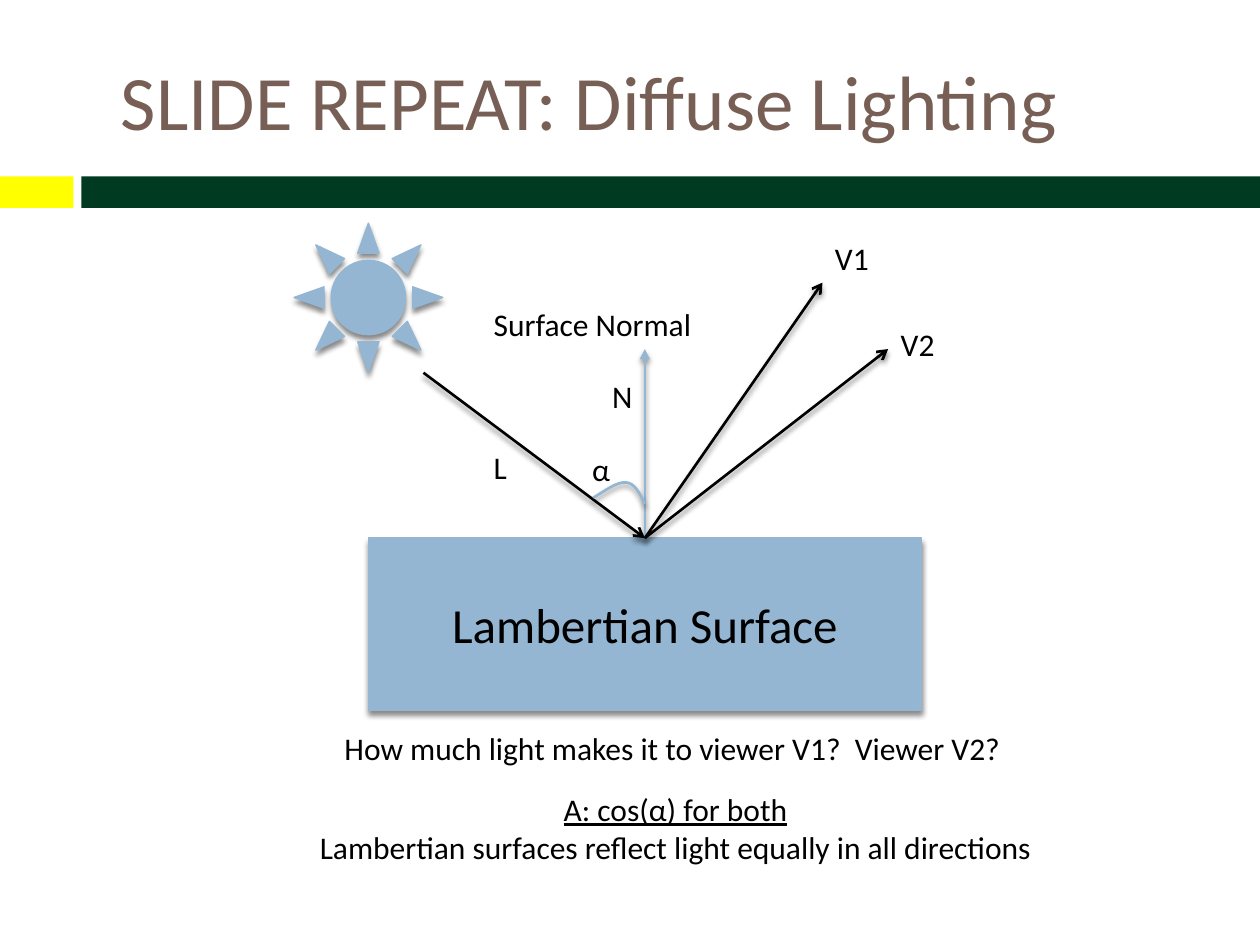
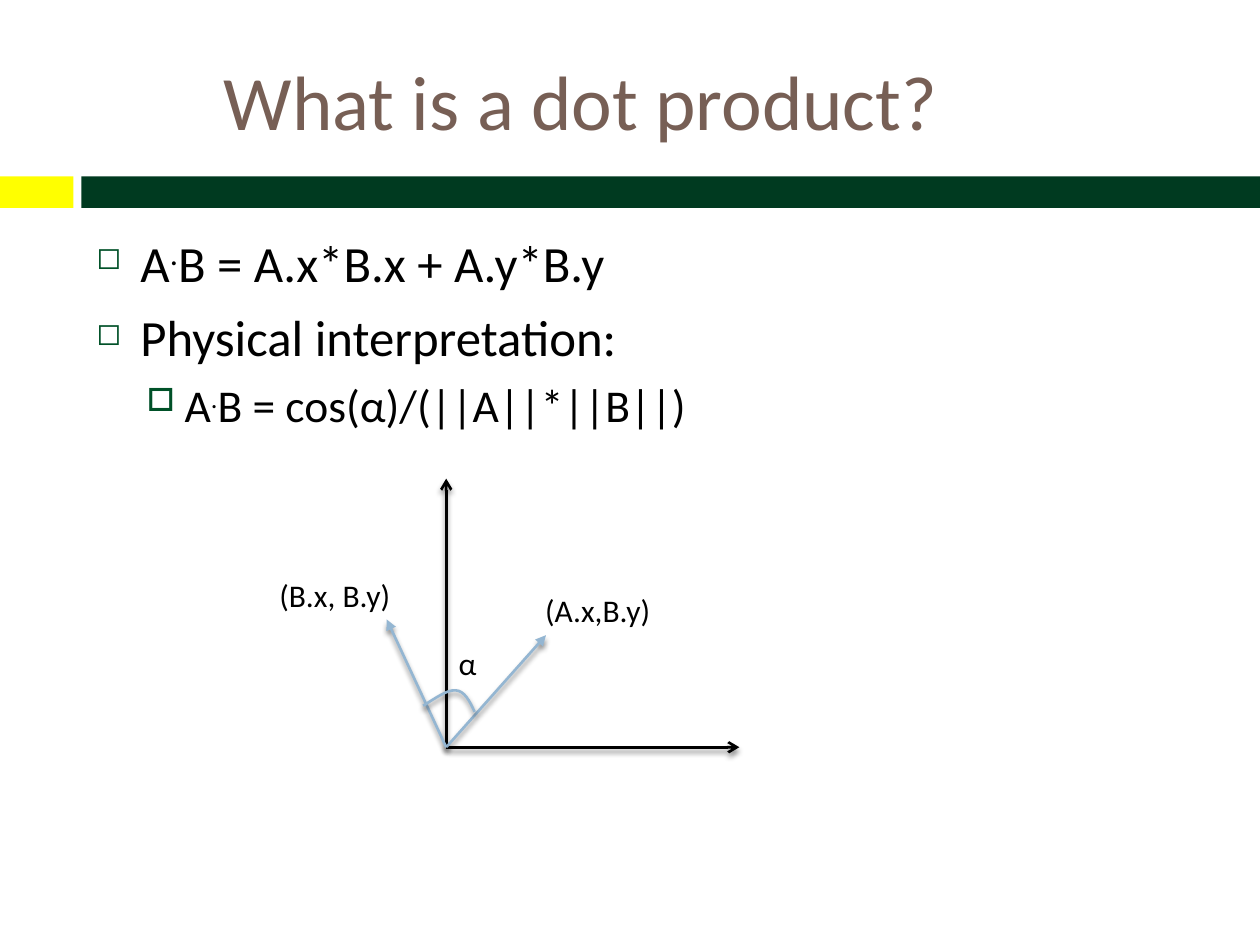
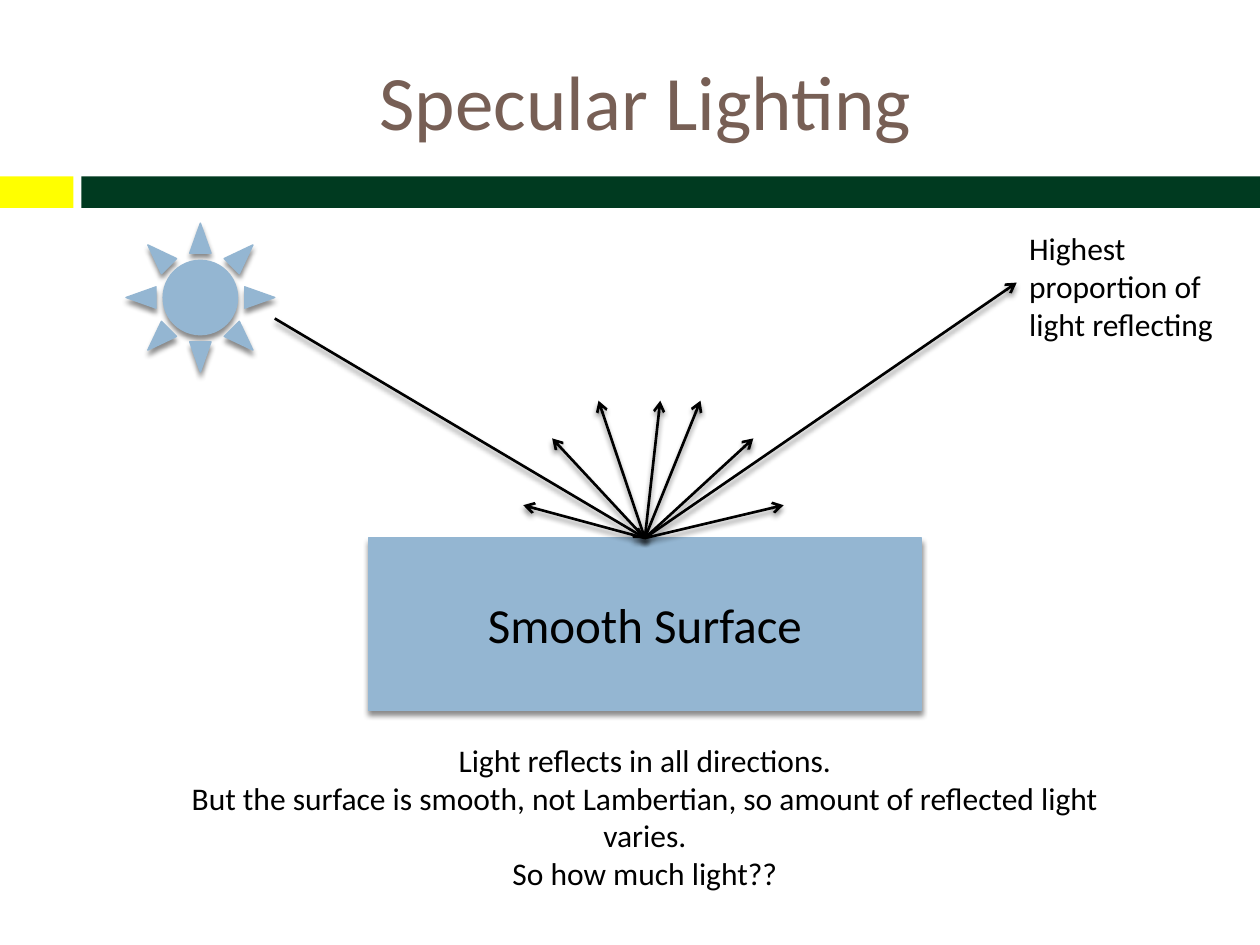
from dataclasses import dataclass

from lxml.etree import SubElement
from pptx import Presentation
from pptx.dml.color import RGBColor
from pptx.enum.shapes import MSO_CONNECTOR, MSO_SHAPE
from pptx.enum.text import MSO_ANCHOR, PP_ALIGN
from pptx.oxml.ns import qn
from pptx.util import Pt


@dataclass(frozen=True)
class Theme:
    font: str = "Calibri"
    ink: RGBColor = RGBColor(0x00, 0x00, 0x00)
    title: RGBColor = RGBColor(0x77, 0x5F, 0x55)
    accent: RGBColor = RGBColor(0x94, 0xB6, 0xD2)
    band: RGBColor = RGBColor(0x00, 0x3A, 0x20)
    band_tab: RGBColor = RGBColor(0xFF, 0xFF, 0x00)
    bullet: str = "005128"
    title_size: float = 44
    surface_size: float = 28
    label_size: float = 18
    formula_size: float = 29
    dot_size: float = 32
    detail_size: float = 26
    ray_width: float = 1.5
    outline_width: float = 0.79


THEME = Theme()
LABEL_HEIGHT = 28.8
HIT = (368.5, 307.5)  # where light meets the surface


def add_run(paragraph, text, size, color=THEME.ink, underline=None, raised=False):
    run = paragraph.add_run()
    run.text = text
    run.font.name = THEME.font
    run.font.size = Pt(size)
    run.font.color.rgb = color
    run.font.underline = underline
    if raised:
        run._r.get_or_add_rPr().set("baseline", "30000")


def add_text_box(slide, left, top, width, height, wrap=True, anchor=MSO_ANCHOR.TOP):
    box = slide.shapes.add_textbox(Pt(left), Pt(top), Pt(width), Pt(height))
    box.text_frame.word_wrap = wrap
    box.text_frame.vertical_anchor = anchor
    return box.text_frame


def next_paragraph(frame, index):
    return frame.add_paragraph() if index else frame.paragraphs[0]


def add_label(slide, text, left, top, width):
    frame = add_text_box(slide, left, top, width, LABEL_HEIGHT, wrap=False)
    add_run(frame.paragraphs[0], text, THEME.label_size)


def add_caption(slide, lines, left, top, width, height, align=PP_ALIGN.CENTER,
                underlined_first=False):
    frame = add_text_box(slide, left, top, width, height)
    for index, line in enumerate(lines):
        paragraph = next_paragraph(frame, index)
        paragraph.alignment = align
        underline = True if underlined_first and index == 0 else None
        add_run(paragraph, line, THEME.label_size, underline=underline)


def cast_shadow(shape):
    """Add the soft drop shadow; call after fill and line are set."""
    effects = SubElement(shape._element.spPr, qn("a:effectLst"))
    shadow = SubElement(effects, qn("a:outerShdw"), blurRad=str(Pt(3)),
                        dist=str(Pt(2.4)), dir="5400000", rotWithShape="0")
    black = SubElement(shadow, qn("a:srgbClr"), val="000000")
    SubElement(black, qn("a:alpha"), val="45000")


def add_solid(slide, preset, left, top, width, height):
    solid = slide.shapes.add_shape(preset, Pt(left), Pt(top), Pt(width), Pt(height))
    solid.fill.solid()
    solid.fill.fore_color.rgb = THEME.accent
    solid.line.color.rgb = THEME.accent
    solid.line.width = Pt(THEME.outline_width)
    cast_shadow(solid)
    return solid


def add_sun(slide, left):
    add_solid(slide, MSO_SHAPE.SUN, left, 127.5, 85, 85)


def add_surface(slide, name):
    surface = add_solid(slide, MSO_SHAPE.RECTANGLE, 210.5, HIT[1], 316, 98.5)
    frame = surface.text_frame
    frame.vertical_anchor = MSO_ANCHOR.MIDDLE
    frame.paragraphs[0].alignment = PP_ALIGN.CENTER
    add_run(frame.paragraphs[0], name, THEME.surface_size)
    return surface


def add_arrow(slide, start, end, color=THEME.ink, head="arrow"):
    arrow = slide.shapes.add_connector(
        MSO_CONNECTOR.STRAIGHT, *(Pt(value) for value in (*start, *end)))
    arrow.line.color.rgb = color
    arrow.line.width = Pt(THEME.ray_width)
    SubElement(arrow.line._get_or_add_ln(), qn("a:tailEnd"), type=head)
    cast_shadow(arrow)
    return arrow


def add_incoming_ray(slide, surface, source):
    add_arrow(slide, source, HIT).end_connect(surface, 0)


def add_outgoing_ray(slide, surface, target, **style):
    add_arrow(slide, HIT, target, **style).begin_connect(surface, 0)


def add_angle_arc(slide, left, top):
    offsets = [(7, -4.3), (13.7, -9.2), (18.5, -8.8),
               (23.5, -8.6), (26.5, -3), (29.4, 3.5)]
    builder = slide.shapes.build_freeform(Pt(left), Pt(top))
    builder.add_line_segments(
        [(Pt(left + dx), Pt(top + dy)) for dx, dy in offsets], close=False)
    arc = builder.convert_to_shape()
    outline = next(arc._element.iter(qn("a:path")))
    segments = outline.findall(qn("a:lnTo"))
    for first in range(0, len(segments), 3):
        curve = SubElement(outline, qn("a:cubicBezTo"))
        for segment in segments[first:first + 3]:
            curve.append(segment[0])
            outline.remove(segment)
    arc.fill.background()
    arc.line.color.rgb = THEME.accent
    arc.line.width = Pt(THEME.ray_width)
    cast_shadow(arc)


def add_bullets(slide, bullets):
    """Each bullet is (runs, symbol, size percent, indent, hang, space before)."""
    frame = add_text_box(slide, 48, 126, 642, 354)
    for index, (runs, symbol, percent, indent, hang, space) in enumerate(bullets):
        paragraph = next_paragraph(frame, index)
        properties = paragraph._p.get_or_add_pPr()
        properties.set("marL", str(Pt(indent)))
        properties.set("indent", str(Pt(-hang)))
        color = SubElement(properties, qn("a:buClr"))
        SubElement(color, qn("a:srgbClr"), val=THEME.bullet)
        SubElement(properties, qn("a:buSzPct"), val=str(percent * 1000))
        SubElement(properties, qn("a:buChar"), char=symbol)
        if index:
            paragraph.space_before = Pt(space)
        for text, size, raised in runs:
            add_run(paragraph, text, size, raised=raised)


def start_slide(deck, title, title_width):
    slide = deck.slides.add_slide(deck.slide_layouts[6])
    for left, width, color in ((0, 42, THEME.band_tab), (46.5, 673.5, THEME.band)):
        band = slide.shapes.add_shape(
            MSO_SHAPE.RECTANGLE, Pt(left), Pt(100.8), Pt(width), Pt(18))
        band.shadow.inherit = False
        band.fill.solid()
        band.fill.fore_color.rgb = color
        band.line.fill.background()
    frame = add_text_box(slide, 48, 18, title_width, 78, anchor=MSO_ANCHOR.MIDDLE)
    frame.paragraphs[0].alignment = PP_ALIGN.CENTER
    add_run(frame.paragraphs[0], title, THEME.title_size, THEME.title)
    return slide


def build_diffuse(deck):
    slide = start_slide(deck, "SLIDE REPEAT: Diffuse Lighting", 577.5)
    surface = add_surface(slide, "Lambertian Surface")
    add_sun(slide, 168)
    add_incoming_ray(slide, surface, (242, 213))
    add_outgoing_ray(slide, surface, (368.5, 199.5), color=THEME.accent, head="triangle")
    add_caption(slide, ["How much light makes it to viewer V1?  Viewer V2?"],
                169, 413.3, 430.5, LABEL_HEIGHT)
    add_caption(slide, ["A: cos(α) for both",
                        "Lambertian surfaces reflect light equally in all directions"],
                146, 447.8, 480, 51, underlined_first=True)
    add_angle_arc(slide, 339, 284.5)
    for viewer in ((470, 161.5), (507.5, 199.5)):
        add_outgoing_ray(slide, surface, viewer)
    for label in (("Surface Normal", 275, 170.6, 141), ("N", 342.7, 211.7, 27.4),
                  ("L", 275, 252.7, 23.8), ("α", 331.2, 253.4, 25.2),
                  ("V1", 470, 133.2, 37.4), ("V2", 507.6, 182.2, 37.4)):
        add_label(slide, *label)


def build_dot_product(deck):
    slide = start_slide(deck, "What is a dot product?", 568)
    formula, detail = THEME.formula_size, THEME.detail_size
    add_bullets(slide, [
        ([("A", formula, False), (".", THEME.dot_size, True),
          ("B = A.x*B.x + A.y*B.y", formula, False)], "◻", 60, 25.2, 25.2, 7),
        ([("Physical interpretation:", formula, False)], "◻", 60, 25.2, 25.2, 7),
        ([("A", detail, False), (".", detail, True),
          ("B = cos(α)/(||A||*||B||)", detail, False)], "□", 70, 50.4, 21.6, 5.5),
    ])
    origin = (255, 427)
    for axis_end in ((422.5, 427), (255, 273.5)):
        add_arrow(slide, origin, axis_end)
    for vector_end in ((312, 363), (221, 354)):
        add_arrow(slide, origin, vector_end, THEME.accent, "triangle")
    add_angle_arc(slide, 241.8, 403.3)
    for label in (("(A.x,B.y)", 304.5, 334, 84.2), ("(B.x, B.y)", 152.6, 325.5, 89.3),
                  ("α", 255, 364.3, 25.2)):
        add_label(slide, *label)


def build_specular(deck):
    slide = start_slide(deck, "Specular Lighting", 642)
    surface = add_surface(slide, "Smooth Surface")
    add_sun(slide, 72)
    add_incoming_ray(slide, surface, (157, 182))
    for target in ((581, 161.5), (377.3, 229), (400.3, 229), (430.5, 250.5),
                   (342, 229), (315.5, 250.5), (299, 288.7), (447.8, 288.7)):
        add_outgoing_ray(slide, surface, target)
    add_caption(slide, ["Highest proportion of light reflecting"],
                581, 127.4, 123, 94.3, align=PP_ALIGN.LEFT)
    add_caption(slide, ["Light reflects in all directions.",
                        "But the surface is smooth, not Lambertian, "
                        "so amount of reflected light varies.",
                        "So how much light??"], 92, 419.8, 553, 94.3)


def main():
    deck = Presentation()
    deck.slide_width, deck.slide_height = Pt(720), Pt(540)
    build_diffuse(deck)
    build_dot_product(deck)
    build_specular(deck)
    deck.save("out.pptx")


if __name__ == "__main__":
    main()
